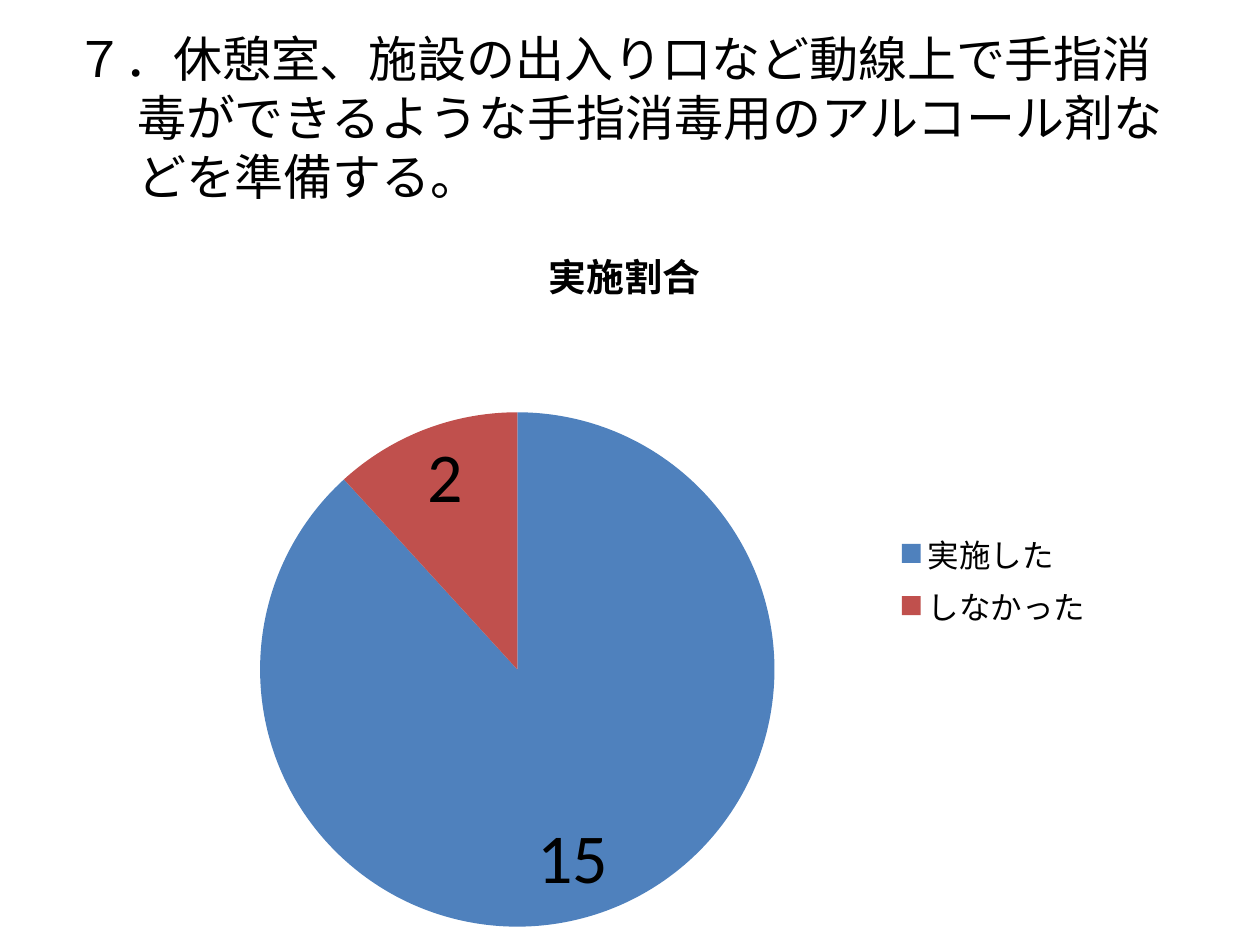
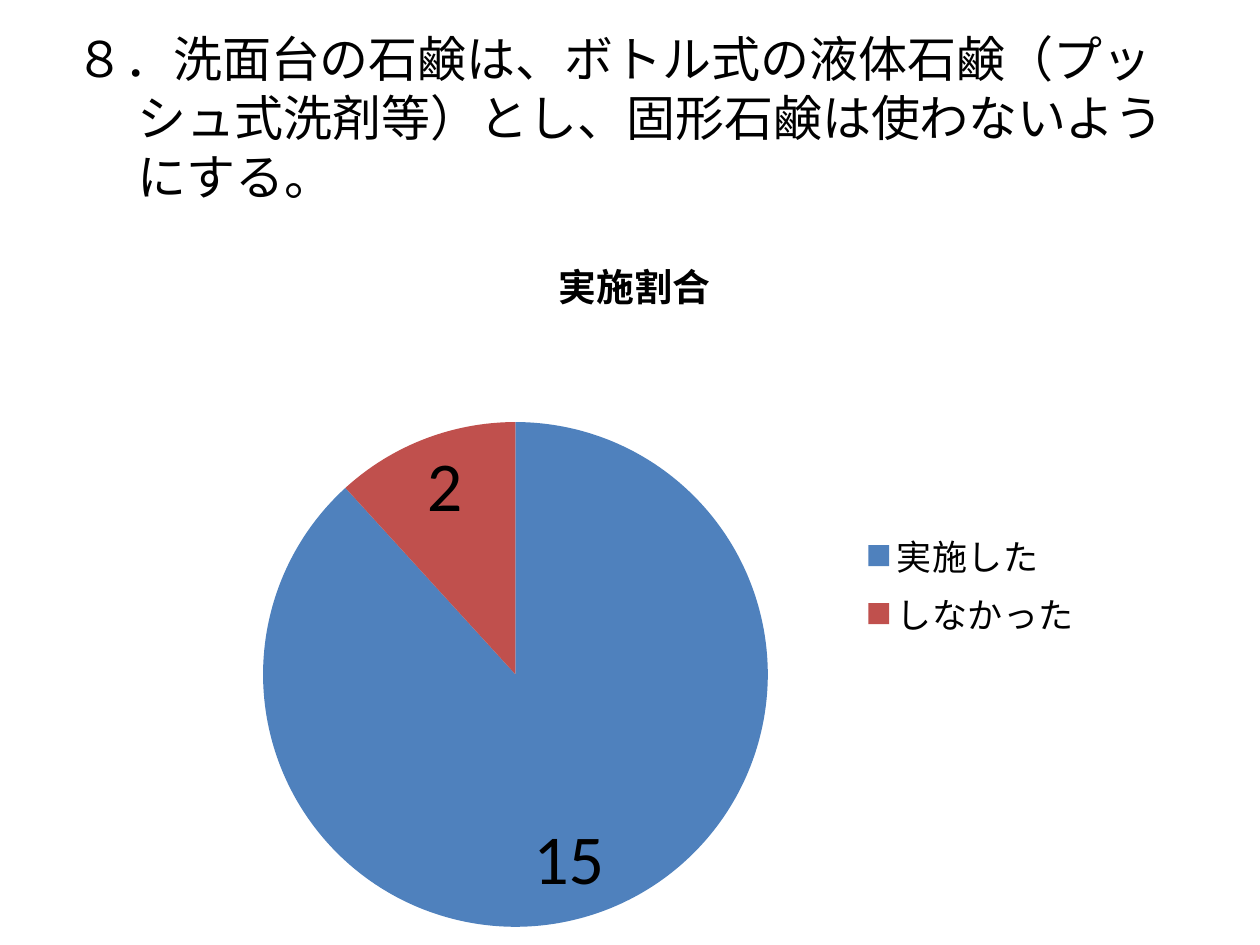
from lxml import etree
from pptx import Presentation
from pptx.chart.data import CategoryChartData
from pptx.dml.color import RGBColor
from pptx.enum.chart import XL_CHART_TYPE, XL_LABEL_POSITION, XL_LEGEND_POSITION
from pptx.enum.text import MSO_ANCHOR
from pptx.oxml.ns import qn
from pptx.util import Pt

PIE = XL_CHART_TYPE.PIE
INSIDE_END = XL_LABEL_POSITION.INSIDE_END
LEGEND_RIGHT = XL_LEGEND_POSITION.RIGHT
MIDDLE = MSO_ANCHOR.MIDDLE

FONT = "Calibri"
BLACK = "000000"
ANSWER_COLORS = ("4F81BD", "C0504D")
CHART_TITLE = "実施割合"
ANSWERS = ("実施した", "しなかった")
QUESTION_BOX = (36, 21.6, 648, 90)
HANGING_INDENT = 35.3

# frame: left, top, width, height of the chart; pie: left, top, diameter
QUESTIONS = [
    {
        "text": "７．休憩室、施設の出入り口など動線上で手指消毒ができるような"
                "手指消毒用のアルコール剤などを準備する。",
        "counts": (15, 2),
        "frame": (82, 122.4, 550, 417.6),
        "pie": (148.6, 235.6, 294),
        "legend_size": 18,
    },
    {
        "text": "８．洗面台の石鹸は、ボトル式の液体石鹸（プッシュ式洗剤等）とし、"
                "固形石鹸は使わないようにする。",
        "counts": (15, 2),
        "frame": (99.4, 128.2, 527, 411.8),
        "pie": (150.3, 241.2, 288.5),
        "legend_size": 20,
    },
]


def color(hex_text):
    return RGBColor.from_string(hex_text)


def style_font(font, size, bold=False):
    font.name = FONT
    font.size = Pt(size)
    font.bold = bold
    font.color.rgb = color(BLACK)


def add_question(slide, text):
    box = slide.shapes.add_textbox(*map(Pt, QUESTION_BOX))
    frame = box.text_frame
    frame.word_wrap = True
    frame.vertical_anchor = MIDDLE
    para = frame.paragraphs[0]
    para.text = text
    style_font(para.runs[0].font, 28)
    properties = para._p.get_or_add_pPr()
    properties.set("marL", str(Pt(HANGING_INDENT)))
    properties.set("indent", str(-Pt(HANGING_INDENT)))


def place_pie(chart, frame, pie):
    """Fix the plot area, given in slide points, as fractions of the chart."""
    left, top, width, height = frame
    pie_left, pie_top, diameter = pie
    fractions = {
        "x": (pie_left - left) / width,
        "y": (pie_top - top) / height,
        "w": diameter / width,
        "h": diameter / height,
    }
    plot_area = chart._chartSpace.chart.plotArea
    for old_layout in plot_area.findall(qn("c:layout")):
        plot_area.remove(old_layout)
    layout = etree.Element(qn("c:layout"))
    plot_area.insert(0, layout)
    manual = etree.SubElement(layout, qn("c:manualLayout"))
    settings = [("layoutTarget", "inner"), ("xMode", "edge"), ("yMode", "edge")]
    settings += [(key, f"{value:.4f}") for key, value in fractions.items()]
    for name, value in settings:
        etree.SubElement(manual, qn(f"c:{name}")).set("val", value)


def add_answer_chart(slide, question):
    data = CategoryChartData()
    data.categories = ANSWERS
    data.add_series(CHART_TITLE, question["counts"])
    chart = slide.shapes.add_chart(PIE, *map(Pt, question["frame"]), data).chart
    style_font(chart.font, 18)

    chart.has_title = True
    title = chart.chart_title
    title.include_in_layout = False
    title.text_frame.text = CHART_TITLE
    style_font(title.text_frame.paragraphs[0].runs[0].font, 21.6, bold=True)

    chart.has_legend = True
    chart.legend.position = LEGEND_RIGHT
    chart.legend.include_in_layout = False
    style_font(chart.legend.font, question["legend_size"])

    plot = chart.plots[0]
    plot.vary_by_categories = True
    for index, answer_color in enumerate(ANSWER_COLORS):
        fill = plot.series[0].points[index].format.fill
        fill.solid()
        fill.fore_color.rgb = color(answer_color)
    plot.has_data_labels = True
    labels = plot.data_labels
    labels.show_value = True
    labels.show_percentage = False
    labels.position = INSIDE_END
    style_font(labels.font, 40)
    place_pie(chart, question["frame"], question["pie"])


def main():
    deck = Presentation()
    deck.slide_width, deck.slide_height = Pt(720), Pt(540)
    blank = deck.slide_layouts[6]
    for question in QUESTIONS:
        slide = deck.slides.add_slide(blank)
        add_question(slide, question["text"])
        add_answer_chart(slide, question)
    deck.save("out.pptx")


if __name__ == "__main__":
    main()
